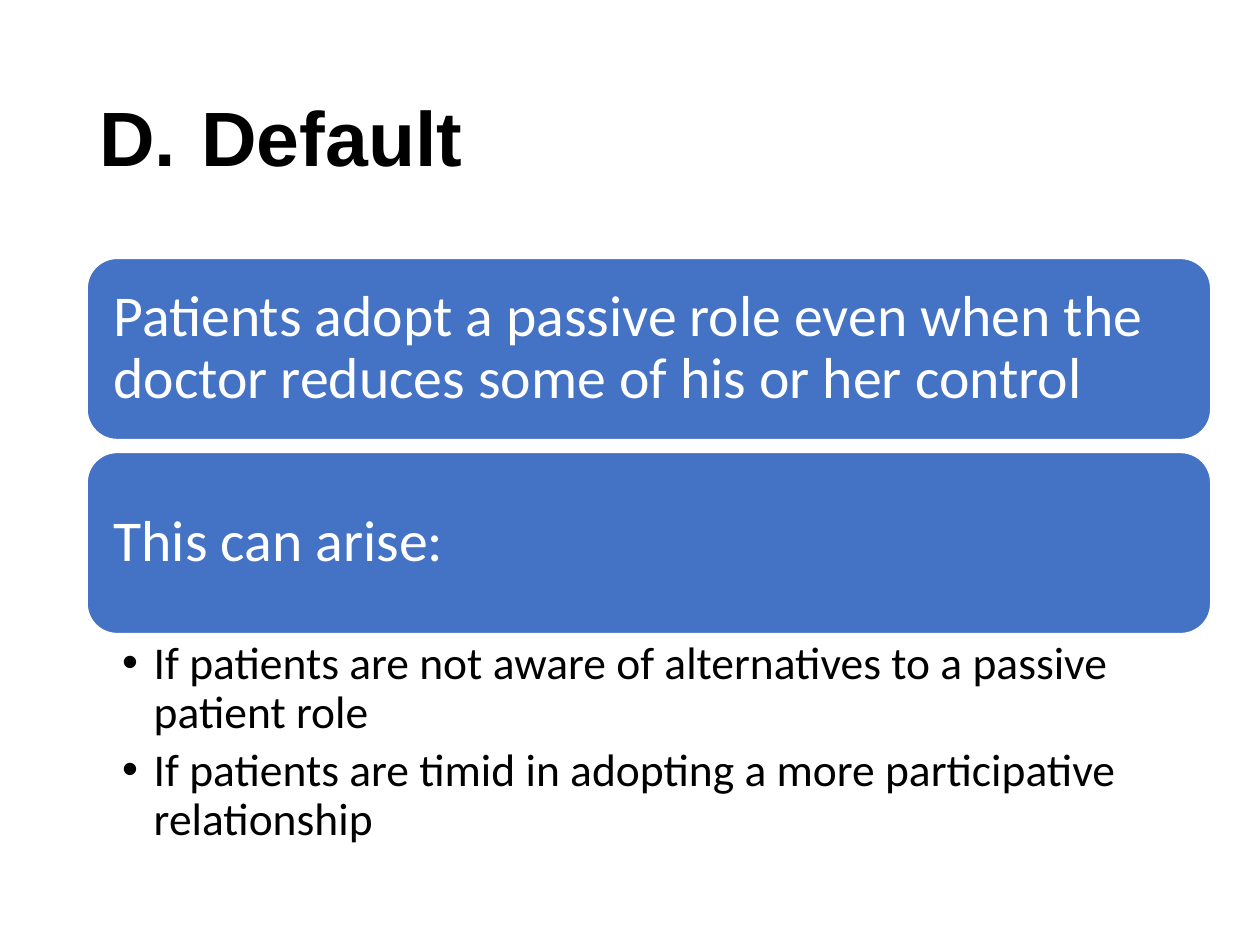
import dataclasses

import pptx
import pptx.dml.color
import pptx.enum.shapes
import pptx.enum.text
import pptx.oxml.ns
import pptx.util
from lxml import etree
from pptx.util import Inches

BLACK, WHITE, BLUE = "000000", "FFFFFF", "4472C4"
LEFT, PANEL_WIDTH, PANEL_HEIGHT = 0.69, 8.92, 1.44
PANEL_TOP, PANEL_PITCH = 2.05, 1.54


@dataclasses.dataclass
class TextStyle:
    font: str
    size: float
    color: str
    bold: bool = False


TITLE = TextStyle("Arial", 44, BLACK, True)
STATEMENT = TextStyle("Calibri", 33, WHITE)
REASON = TextStyle("Calibri", 26, BLACK)

STATEMENTS = [
    "Patients adopt a passive role even when the doctor reduces some of his or her control",
    "This can arise:",
]
REASONS = [
    "If patients are not aware of alternatives to a passive patient role",
    "If patients are timid in adopting a more participative relationship",
]


def rgb(color: str) -> pptx.dml.color.RGBColor:
    return pptx.dml.color.RGBColor.from_string(color)


def add_marker(paragraph, indent: float, tag: str, **attributes: str) -> None:
    """Give a paragraph a hanging bullet or number."""
    properties = paragraph._p.get_or_add_pPr()
    properties.set("marL", str(Inches(indent)))
    properties.set("indent", str(-Inches(indent)))
    qn = pptx.oxml.ns.qn
    etree.SubElement(properties, qn("a:buFont"), typeface="Arial")
    etree.SubElement(properties, qn(tag), **attributes)


def style_paragraph(paragraph, style: TextStyle) -> None:
    paragraph.alignment = pptx.enum.text.PP_ALIGN.LEFT
    paragraph.line_spacing = 0.9
    for run in paragraph.runs:
        run.font.name = style.font
        run.font.size = pptx.util.Pt(style.size)
        run.font.bold = style.bold
        run.font.color.rgb = rgb(style.color)


def set_frame(frame, anchor, left: float, top: float, right: float, bottom: float) -> None:
    frame.word_wrap = True
    frame.vertical_anchor = anchor
    frame.margin_left, frame.margin_top = Inches(left), Inches(top)
    frame.margin_right, frame.margin_bottom = Inches(right), Inches(bottom)


def add_title(slide) -> None:
    title = slide.shapes.add_textbox(Inches(LEFT), Inches(0.4), Inches(8.62), Inches(1.45))
    frame = title.text_frame
    set_frame(frame, pptx.enum.text.MSO_ANCHOR.MIDDLE, 0.1, 0.05, 0.1, 0.05)
    frame.text = "Default"
    heading = frame.paragraphs[0]
    add_marker(heading, 0.81, "a:buAutoNum", type="alphaUcPeriod", startAt="4")
    style_paragraph(heading, TITLE)


def add_panel(slide, top: float, statement: str) -> None:
    panel = slide.shapes.add_shape(
        pptx.enum.shapes.MSO_SHAPE.ROUNDED_RECTANGLE,
        Inches(LEFT), Inches(top), Inches(PANEL_WIDTH), Inches(PANEL_HEIGHT))
    panel.shadow.inherit = False
    panel.fill.solid()
    panel.fill.fore_color.rgb = rgb(BLUE)
    panel.line.color.rgb = rgb(WHITE)
    panel.line.width = pptx.util.Pt(1)
    frame = panel.text_frame
    set_frame(frame, pptx.enum.text.MSO_ANCHOR.MIDDLE, 0.14, 0.14, 0.14, 0.14)
    frame.text = statement
    style_paragraph(frame.paragraphs[0], STATEMENT)


def add_reasons(slide, top: float) -> None:
    reasons = slide.shapes.add_textbox(
        Inches(LEFT), Inches(top), Inches(PANEL_WIDTH), Inches(1.79))
    frame = reasons.text_frame
    set_frame(frame, pptx.enum.text.MSO_ANCHOR.TOP, 0.28, 0.05, 0.26, 0.05)
    frame.text = "\n".join(REASONS)
    for paragraph in frame.paragraphs:
        add_marker(paragraph, 0.25, "a:buChar", char="•")
        paragraph.level = 1
        paragraph.space_after = pptx.util.Pt(5.2)
        style_paragraph(paragraph, REASON)


def main() -> None:
    presentation = pptx.Presentation()
    presentation.slide_width, presentation.slide_height = Inches(10), Inches(7.5)
    slide = presentation.slides.add_slide(presentation.slide_layouts[6])

    # Numbered title
    add_title(slide)

    # Stacked statements
    for row, statement in enumerate(STATEMENTS):
        add_panel(slide, PANEL_TOP + row * PANEL_PITCH, statement)

    # Reasons under the last statement
    add_reasons(slide, PANEL_TOP + PANEL_PITCH + PANEL_HEIGHT)

    presentation.save("out.pptx")


if __name__ == "__main__":
    main()
